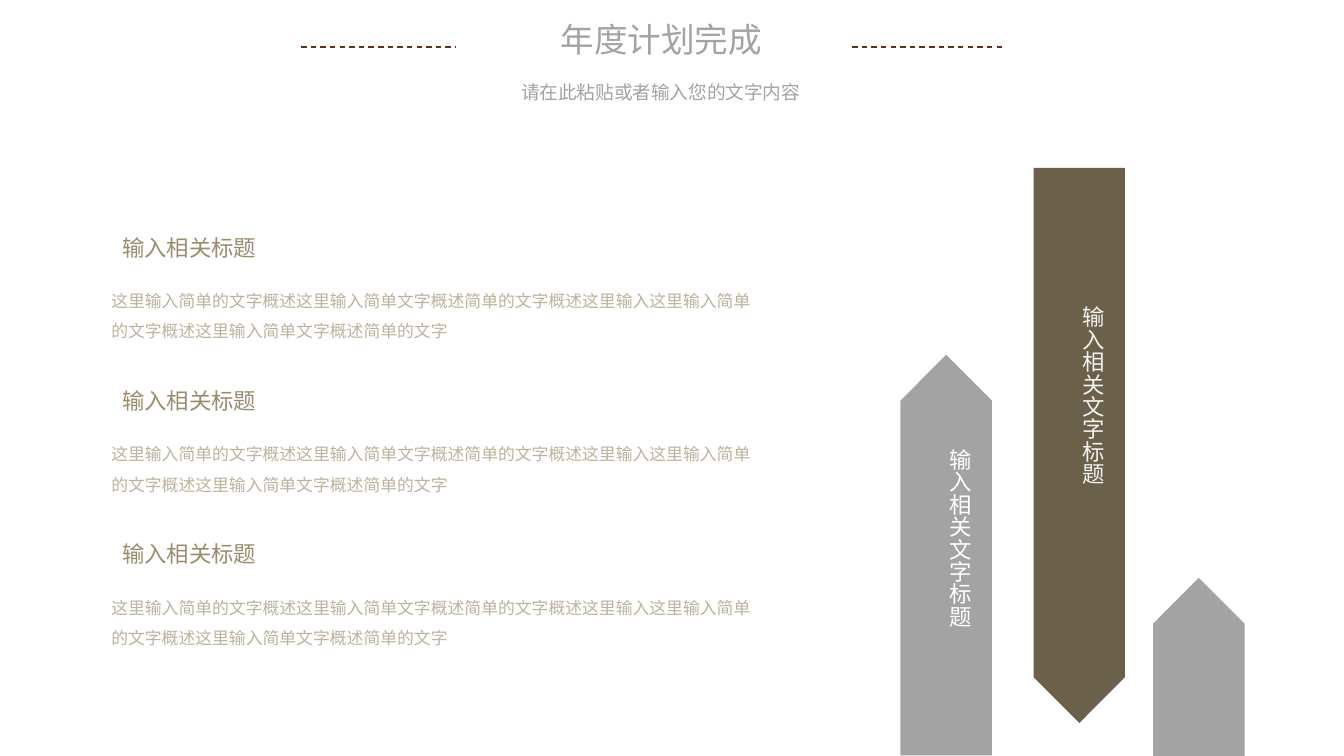
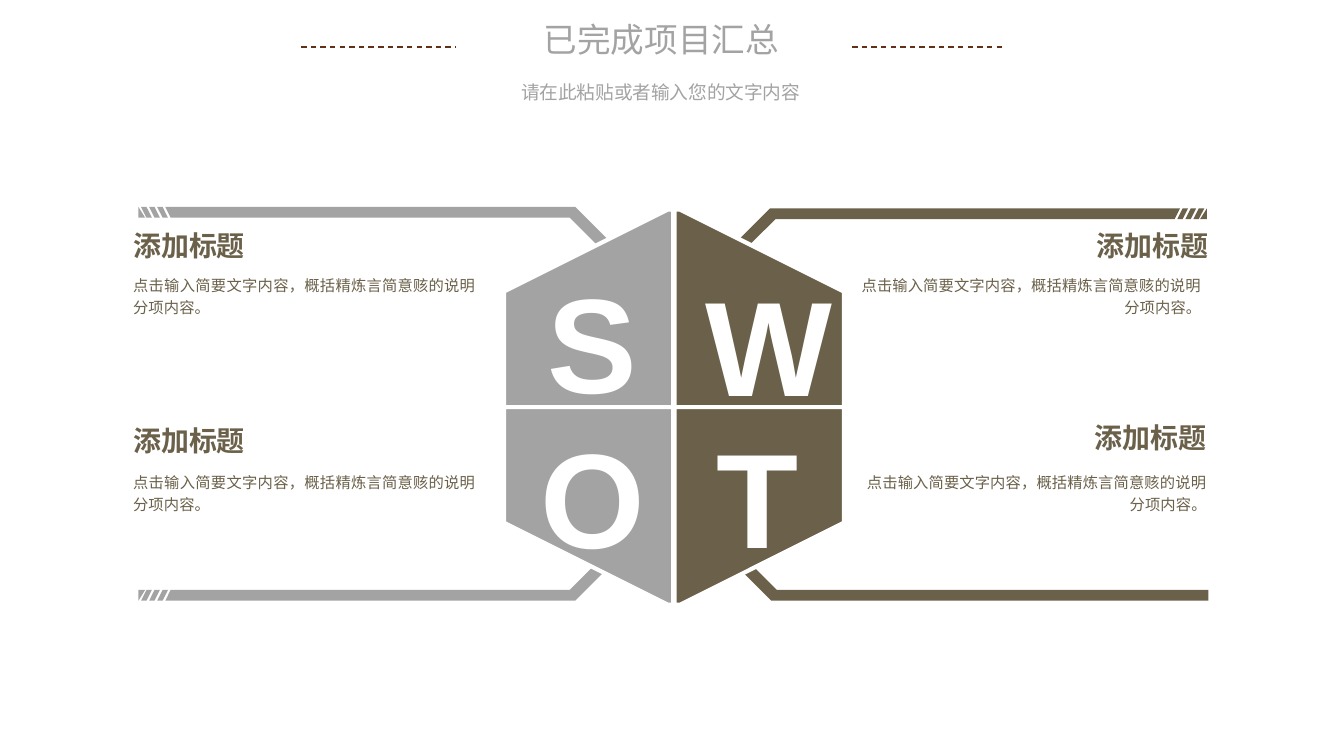
import pptx
import pptx.dml.color
import pptx.enum.dml
import pptx.enum.lang
import pptx.enum.shapes
import pptx.enum.text
import pptx.oxml
import pptx.oxml.ns
import pptx.util

Inches = pptx.util.Inches
RGBColor = pptx.dml.color.RGBColor
ALIGN = pptx.enum.text.PP_ALIGN
SHAPE = pptx.enum.shapes.MSO_SHAPE

GREY = RGBColor(0xA3, 0xA3, 0xA3)
BROWN = RGBColor(0x6B, 0x61, 0x4A)
TAN = RGBColor(0x9A, 0x8C, 0x6D)
SAND = RGBColor(0xBC, 0xB3, 0x9E)
RUST = RGBColor(0x63, 0x30, 0x17)
WHITE = RGBColor(0xFF, 0xFF, 0xFF)
PALE = RGBColor(0xF2, 0xF2, 0xF2)

FONT = "Arial"
TITLE_CENTER = 4.92
SUBTITLE = "请在此粘贴或者输入您的文字内容"
TOPIC = "输入相关标题"
TOPIC_SUMMARY = ("这里输入简单的文字概述这里输入简单文字概述简单的文字概述这里输入"
                 "这里输入简单的文字概述这里输入简单文字概述简单的文字")
ARROW_LABEL = "输入相关文字标题"
SWOT_HEADING = "添加标题"
SWOT_SUMMARY = "点击输入简要文字内容，概括精炼言简意赅的说明分项内容。"


def write(frame, text, size, color, align=ALIGN.LEFT, bold=False, spacing=None):
    paragraph = frame.paragraphs[0]
    paragraph.alignment = align
    if spacing:
        paragraph.line_spacing = spacing
    run = paragraph.add_run()
    run.text = text
    run.font.name = FONT
    run.font.size = pptx.util.Pt(size)
    run.font.bold = bold
    run.font.color.rgb = color
    run.font.language_id = pptx.enum.lang.MSO_LANGUAGE_ID.SIMPLIFIED_CHINESE


def add_text(slide, box, text, size, color, grow=False, inset=True, **style):
    frame = slide.shapes.add_textbox(*map(Inches, box)).text_frame
    frame.word_wrap = True
    if grow:
        frame.auto_size = pptx.enum.text.MSO_AUTO_SIZE.SHAPE_TO_FIT_TEXT
    if not inset:
        frame.margin_left = frame.margin_right = 0
        frame.margin_top = frame.margin_bottom = 0
    write(frame, text, size, color, **style)


def paint(shape, fill, outline=None):
    shape.shadow.inherit = False
    shape.fill.solid()
    shape.fill.fore_color.rgb = fill
    if outline is None:
        shape.line.fill.background()
    else:
        shape.line.color.rgb = outline
        shape.line.width = pptx.util.Pt(2.25)


def add_outline(slide, origin, direction, contours, fill, outline=None):
    """Draw contours measured from origin, mirrored by the signs in direction."""
    placed = [[tuple(Inches(o + d * p) for o, d, p in zip(origin, direction, point))
               for point in contour] for contour in contours]
    builder = slide.shapes.build_freeform(*placed[0][0])
    for index, contour in enumerate(placed):
        if index:
            builder.move_to(*contour[0])
        builder.add_line_segments(contour[1:], close=True)
    paint(builder.convert_to_shape(), fill, outline)


def add_dash(slide, left, right, y):
    dash = slide.shapes.add_connector(
        pptx.enum.shapes.MSO_CONNECTOR.STRAIGHT, *map(Inches, (left, y, right, y)))
    dash.line.color.rgb = RUST
    dash.line.width = pptx.util.Pt(0.75)
    dash.line.dash_style = pptx.enum.dml.MSO_LINE.DASH
    properties = dash.element.find(pptx.oxml.ns.qn("p:spPr"))
    properties.append(pptx.oxml.parse_xml(
        "<a:effectLst %s/>" % pptx.oxml.ns.nsdecls("a")))


def add_header(slide, title, title_width):
    add_text(slide, (TITLE_CENTER - title_width / 2, 0.09, title_width, 0.4),
             title, 18, GREY, grow=True, align=ALIGN.CENTER)
    add_text(slide, (1.84, 0.52, 6.15, 0.28), SUBTITLE, 10, GREY,
             align=ALIGN.CENTER, spacing=1.2)
    add_dash(slide, 6.34, 7.48, 0.35)
    add_dash(slide, 2.24, 3.39, 0.35)


def add_topic(slide, left, top):
    add_text(slide, (left, top + 0.35, 5.06, 0.53), TOPIC_SUMMARY, 9, SAND,
             grow=True, spacing=1.5)
    add_text(slide, (left + 0.08, top, 2.21, 0.3), TOPIC, 12, TAN, grow=True)


def add_arrow(slide, left, top, height, fill, up, label_color=None, label_drop=0):
    """Stand a pentagon arrow in its upright box, with an optional vertical label."""
    width = 0.68
    arrow = slide.shapes.add_shape(
        SHAPE.PENTAGON, Inches(left + (width - height) / 2),
        Inches(top + (height - width) / 2), Inches(height), Inches(width))
    arrow.rotation = 270 if up else 90
    paint(arrow, fill)
    if label_color is None:
        return
    label = slide.shapes.add_shape(SHAPE.RECTANGLE, *map(
        Inches, (left + 0.19, top + label_drop, 0.4, 1.45)))
    paint(label, fill)
    frame = label.text_frame
    frame.word_wrap = False
    frame.auto_size = pptx.enum.text.MSO_AUTO_SIZE.SHAPE_TO_FIT_TEXT
    frame.vertical_anchor = pptx.enum.text.MSO_ANCHOR.TOP
    label.element.txBody.bodyPr.set("vert", "eaVert")
    write(frame, ARROW_LABEL, 12, label_color)


def add_bracket(slide, corner, direction, fill, striped=True):
    """Run a bent bar from an outer corner towards the middle of the slide."""
    start = (0.2, 0.24) if striped else (0, 0)
    bar = [(start[0], 0), (3.25, 0), (3.99, 0.74), (3.99, 1.47),
           (3.91, 1.47), (3.91, 0.78), (3.21, 0.08), (start[1], 0.08)]
    contours = [bar]
    if striped:
        contours += [[(s, 0), (s + 0.04, 0), (s + 0.08, 0.08), (s + 0.04, 0.08)]
                     for s in (0.14, 0.08, 0.02)]
        contours.append([(0, 0), (0.05, 0.08), (0, 0.08)])
    add_outline(slide, corner, direction, contours, fill)


def add_hexagon_quarter(slide, corner, direction, fill):
    quarter = [(0, 0), (1.26, 0), (1.26, 0.86), (0.04, 1.47), (0, 1.47)]
    add_outline(slide, corner, direction, [quarter], fill, WHITE)


def add_swot_note(slide, heading_box, summary_left, summary_top, heading_align,
                  summary_align):
    add_text(slide, (summary_left, summary_top, 2.55, 0.94), SWOT_SUMMARY, 8.25,
             BROWN, inset=False, align=summary_align, spacing=1.2)
    add_text(slide, heading_box, SWOT_HEADING, 15, BROWN, inset=False,
             align=heading_align, bold=True)


def build_plan_slide(slide):
    add_header(slide, "年度计划完成", 2.05)
    add_arrow(slide, 8.58, 4.3, 1.33, GREY, up=True)
    for row in range(3):
        add_topic(slide, 0.73, 1.69 + 1.14 * row)
    add_arrow(slide, 7.69, 1.25, 4.13, BROWN, False, PALE, 0.93)
    add_arrow(slide, 6.7, 2.64, 2.98, GREY, True, WHITE, 0.6)


def build_swot_slide(slide):
    add_header(slide, "已完成项目汇总", 2.37)

    add_bracket(slide, (1.03, 4.47), (1, -1), GREY)
    add_bracket(slide, (8.98, 1.55), (-1, 1), BROWN)
    add_bracket(slide, (8.99, 4.47), (-1, -1), BROWN, striped=False)
    add_bracket(slide, (1.03, 1.54), (1, 1), GREY)

    left, right = (ALIGN.LEFT, ALIGN.JUSTIFY), (ALIGN.RIGHT, ALIGN.RIGHT)
    add_swot_note(slide, (0.99, 1.7, 1.07, 0.25), 0.99, 2.03, *left)
    add_swot_note(slide, (0.99, 3.15, 1.47, 0.25), 0.99, 3.49, *left)
    add_swot_note(slide, (7.79, 1.7, 1.2, 0.25), 6.39, 2.03, *right)
    add_swot_note(slide, (7.51, 3.13, 1.47, 0.25), 6.43, 3.49, *right)

    for x, across, fill in ((5.01, -1, GREY), (5.02, 1, BROWN)):
        for down in (-1, 1):
            add_hexagon_quarter(slide, (x, 3.03), (across, down), fill)
    for letter, x, y, width in (("S", 3.75, 1.88, 1.32), ("O", 3.75, 3.03, 1.32),
                                ("W", 5.15, 1.9, 0.99), ("T", 5.03, 3.03, 1.21)):
        add_text(slide, (x, y, width, 1.29), letter, 72, WHITE,
                 align=ALIGN.CENTER, bold=True)


def main():
    deck = pptx.Presentation()
    deck.slide_width = Inches(10)
    deck.slide_height = deck.slide_width * 9 // 16
    for build in (build_plan_slide, build_swot_slide):
        build(deck.slides.add_slide(deck.slide_layouts[6]))
    deck.save("out.pptx")


if __name__ == "__main__":
    main()
